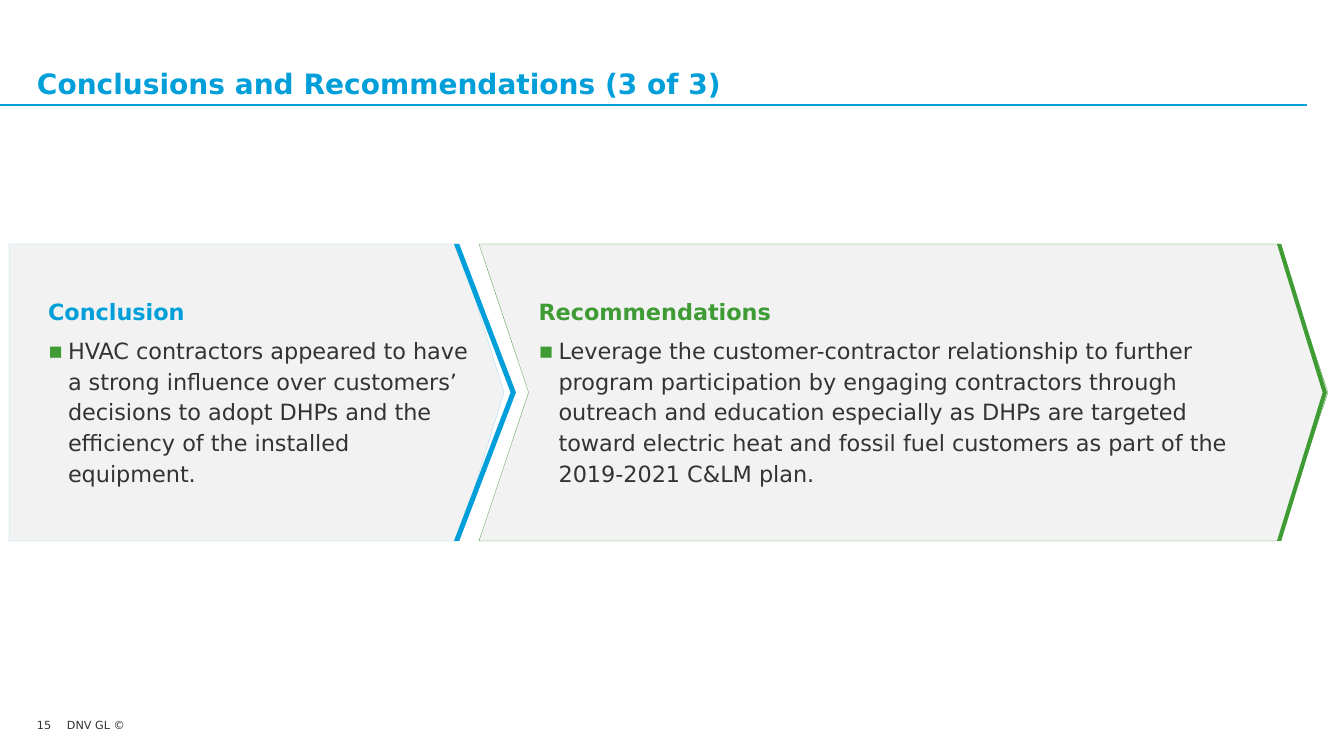
"""Build the slide of conclusions and recommendations with two arrow panels."""
import lxml.etree
import pptx
import pptx.dml.color
import pptx.enum.shapes
import pptx.enum.text
import pptx.oxml.ns
import pptx.util

SCALE = 914400 / 100.8
FONT = "DejaVu Sans"
COLOURS = {"blue": "009FDA", "pale_blue": "99D6F0", "green": "3F9C35",
           "grey": "F2F2F2", "text": "333333"}
SHAPES = pptx.enum.shapes.MSO_SHAPE
ANCHORS = pptx.enum.text.MSO_ANCHOR
qn = pptx.oxml.ns.qn


def px(*lengths):
    return [pptx.util.Emu(round(length * SCALE)) for length in lengths]


def add_span(para, text, size, colour, bold=False):
    para.alignment = pptx.enum.text.PP_ALIGN.LEFT
    span = para.add_run()
    span.text = text
    span.font.name = FONT
    span.font.size = pptx.util.Pt(size)
    span.font.bold = bold
    span.font.color.rgb = pptx.dml.color.RGBColor.from_string(COLOURS[colour])


deck = pptx.Presentation()
deck.slide_width, deck.slide_height = px(1344, 756)
page = deck.slides.add_slide(deck.slide_layouts[5])

title = page.shapes.title
title.left, title.top, title.width, title.height = px(37, 26, 1270, 74)
title_frame = title.text_frame
title_frame.auto_size = pptx.enum.text.MSO_AUTO_SIZE.NONE
title_frame.vertical_anchor = ANCHORS.BOTTOM
add_span(title_frame.paragraphs[0], "Conclusions and Recommendations (3 of 3)", 20, "blue", True)

rule = page.shapes.add_connector(pptx.enum.shapes.MSO_CONNECTOR.STRAIGHT, *px(0, 105, 1307, 105))
rule.line.color.rgb = pptx.dml.color.RGBColor.from_string(COLOURS["blue"])
rule.line.width = pptx.util.Pt(1.25)
lxml.etree.SubElement(rule.element.spPr, qn("a:effectLst"))

footer_frames = []
for left, width, text in [(37, 30, "15"), (67, 60, "DNV GL ©")]:
    box = page.shapes.add_textbox(*px(left, 718, width, 14))
    box.text_frame.word_wrap = False
    add_span(box.text_frame.paragraphs[0], text, 8, "text")
    footer_frames.append(box.text_frame)

for frame in [title_frame, *footer_frames]:
    frame.margin_left = frame.margin_top = frame.margin_right = frame.margin_bottom = 0

panels = [
    {"shape": SHAPES.PENTAGON, "left": 9, "width": 495, "point": 0.155, "inset": 39,
     "border": "pale_blue", "accent": "blue", "tip_left": 454, "tip_width": 62,
     "heading": "Conclusion",
     "body": "HVAC contractors appeared to have a strong influence over customers’ decisions "
             "to adopt DHPs and the efficiency of the installed equipment."},
    {"shape": SHAPES.CHEVRON, "left": 479, "width": 849, "point": 0.167, "inset": 10,
     "border": "green", "accent": "green", "tip_left": 1277, "tip_width": 50,
     "heading": "Recommendations",
     "body": "Leverage the customer-contractor relationship to further program participation "
             "by engaging contractors through outreach and education especially as DHPs are "
             "targeted toward electric heat and fossil fuel customers as part of the "
             "2019-2021 C&LM plan."},
]
for panel in panels:
    group = page.shapes.add_group_shape()
    arrow = group.shapes.add_shape(panel["shape"], *px(panel["left"], 244, panel["width"], 297))
    tip = group.shapes.add_shape(SHAPES.CHEVRON, *px(panel["tip_left"], 244, panel["tip_width"], 297))
    for shape, point, fill in [(arrow, panel["point"], "grey"), (tip, 0.914, panel["accent"])]:
        shape.adjustments[0] = point
        shape.shadow.inherit = False
        shape.fill.solid()
        shape.fill.fore_color.rgb = pptx.dml.color.RGBColor.from_string(COLOURS[fill])
    arrow.line.color.rgb = pptx.dml.color.RGBColor.from_string(COLOURS[panel["border"]])
    arrow.line.width = pptx.util.Pt(0.2)
    tip.line.fill.background()

    frame = arrow.text_frame
    frame.word_wrap = True
    frame.vertical_anchor = ANCHORS.MIDDLE
    frame.margin_left, frame.margin_top, frame.margin_right, frame.margin_bottom = px(
        panel["inset"], 5, 10, 5)
    add_span(frame.paragraphs[0], panel["heading"], 16, panel["accent"], True)

    para = frame.add_paragraph()
    para.level = 1
    properties = para._p.get_or_add_pPr()
    indent = px(20)[0]
    properties.set("marL", str(indent))
    properties.set("indent", str(-indent))
    bullet_colour = lxml.etree.SubElement(properties, qn("a:buClr"))
    lxml.etree.SubElement(bullet_colour, qn("a:srgbClr"), val=COLOURS["green"])
    lxml.etree.SubElement(properties, qn("a:buFont"), typeface=FONT)
    lxml.etree.SubElement(properties, qn("a:buChar"), char="▪")
    para.line_spacing = 1.14
    para.space_before = para.space_after = pptx.util.Pt(6)
    add_span(para, panel["body"], 16, "text")

deck.save("out.pptx")
